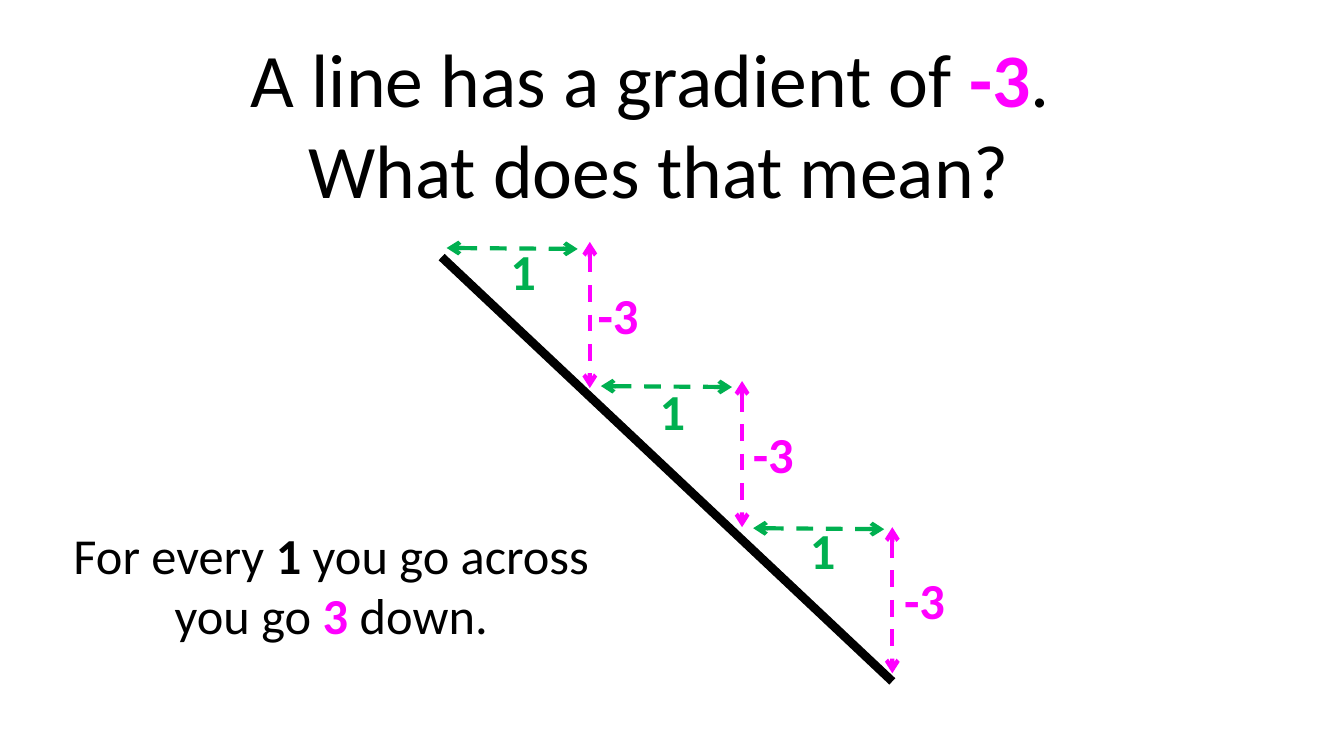
"""Build a slide explaining what a gradient of -3 means."""
from dataclasses import dataclass

from lxml.etree import SubElement
from pptx import Presentation
from pptx.dml.color import RGBColor
from pptx.enum.dml import MSO_LINE_DASH_STYLE as Dash
from pptx.enum.shapes import MSO_CONNECTOR as Connector
from pptx.enum.text import MSO_AUTO_SIZE as AutoSize, PP_ALIGN as Align
from pptx.oxml.ns import qn
from pptx.slide import Slide
from pptx.util import Inches, Pt

Point = tuple[float, float]


@dataclass(frozen=True)
class Theme:
    """Colours, font and sizes of the slide."""
    font: str = "Calibri"
    ink: str = "000000"
    across: str = "00B050"
    down: str = "FF00FF"
    title: float = 54
    body: float = 36
    slope_width: float = 6.25
    arrow_width: float = 3


THEME = Theme()


@dataclass(frozen=True)
class Run:
    """A piece of text with its colour and weight."""
    text: str
    color: str = THEME.ink
    bold: bool = False


@dataclass(frozen=True)
class Step:
    """Arrow starts and label corners of one step along the slope."""
    across: Point
    down: Point
    across_label: Point
    down_label: Point


ACROSS_LENGTH, ACROSS_TILT, DOWN_LENGTH = 1.3, 0.01, 1.45
LABEL_WIDTH, LABEL_HEIGHT = 0.94, 0.71
STEPS = [
    Step((4.43, 2.46), (5.85, 2.4), (4.72, 2.33), (5.66, 2.77)),
    Step((5.96, 3.83), (7.36, 3.78), (6.2, 3.72), (7.2, 4.15)),
    Step((7.47, 5.24), (8.85, 5.23), (7.69, 5.1), (8.7, 5.6)),
]
TITLE = [
    [Run("A line has a gradient of "), Run("-3", THEME.down, True), Run(". ")],
    [Run("What does that mean?")],
]
MEANING = [
    [Run("For every "), Run("1", bold=True), Run(" you go across")],
    [Run("you go "), Run("3", THEME.down, True), Run(" down.")],
]


def add_line(s: Slide, start: Point, end: Point, color: str, width: float,
             arrow: bool = False) -> None:
    """Draw a line, dashed and with two arrowheads if it is an arrow."""
    line = s.shapes.add_connector(Connector.STRAIGHT, *map(Inches, start + end))
    SubElement(line._element.spPr, qn("a:effectLst"))
    line.line.color.rgb = RGBColor.from_string(color)
    line.line.width = Pt(width)
    if arrow:
        line.line.dash_style = Dash.DASH
        ln = line.line._get_or_add_ln()
        for end_tag in ("a:headEnd", "a:tailEnd"):
            SubElement(ln, qn(end_tag), type="arrow")


def add_text(s: Slide, at: Point, size: Point, lines: list[list[Run]],
             points: float) -> None:
    """Write centred lines of formatted runs."""
    tf = s.shapes.add_textbox(*map(Inches, at + size)).text_frame
    tf.word_wrap = True
    tf.auto_size = AutoSize.SHAPE_TO_FIT_TEXT
    for i, line in enumerate(lines):
        p = tf.add_paragraph() if i else tf.paragraphs[0]
        p.alignment = Align.CENTER
        for run in line:
            r = p.add_run()
            r.text = run.text
            r.font.name = THEME.font
            r.font.size = Pt(points)
            r.font.bold = run.bold
            r.font.color.rgb = RGBColor.from_string(run.color)


def add_step(s: Slide, step: Step) -> None:
    """Draw one step with its two arrows and labels."""
    arrows = [
        (step.across, ACROSS_LENGTH, ACROSS_TILT, step.across_label, "1", THEME.across),
        (step.down, 0, DOWN_LENGTH, step.down_label, "-3", THEME.down),
    ]
    for (x, y), dx, dy, label_at, label, color in arrows:
        add_line(s, (x, y), (x + dx, y + dy), color, THEME.arrow_width, arrow=True)
        add_text(s, label_at, (LABEL_WIDTH, LABEL_HEIGHT),
                 [[Run(label, color, True)]], THEME.body)


def main() -> None:
    """Build and save the slide."""
    prs = Presentation()
    prs.slide_width, prs.slide_height = Inches(13.33), Inches(7.5)
    s = prs.slides.add_slide(prs.slide_layouts[6])
    add_line(s, (4.38, 2.55), (8.85, 6.76), THEME.ink, THEME.slope_width)
    add_text(s, (0.29, 0.27), (12.49, 1.92), TITLE, THEME.title)
    for step in STEPS:
        add_step(s, step)
    add_text(s, (0.54, 5.15), (5.49, 1.31), MEANING, THEME.body)
    prs.save("out.pptx")


if __name__ == "__main__":
    main()
